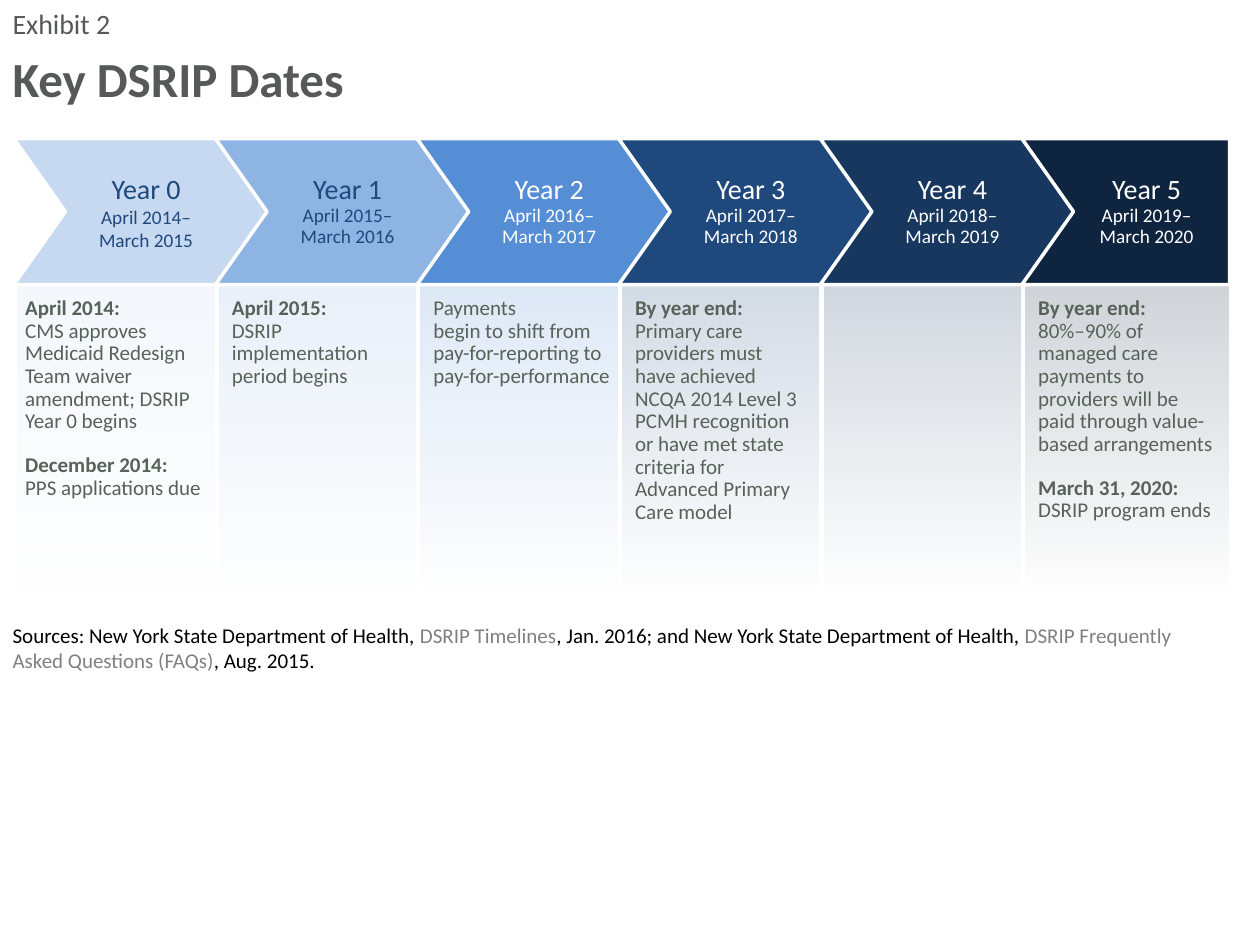
"""Build the Key DSRIP Dates timeline slide."""
from dataclasses import dataclass

import pptx
import pptx.dml.color
import pptx.enum.shapes
import pptx.enum.text
import pptx.oxml
import pptx.oxml.ns
import pptx.util
from lxml import etree
from pptx.util import Inches

ALIGN = pptx.enum.text.PP_ALIGN
ANCHOR = pptx.enum.text.MSO_ANCHOR


@dataclass(frozen=True)
class Theme:
    font: str = "Calibri"
    title_color: str = "575959"
    note_color: str = "576258"
    dark_text: str = "1F497D"
    white: str = "FFFFFF"
    black: str = "000000"
    grey: str = "808080"
    title_size: int = 28
    heading_size: int = 16
    body_size: int = 12
    date_size: int = 11


@dataclass(frozen=True)
class Year:
    label: str
    fill: str
    text_color: str
    notes: str = ""
    note_width: float = 1.4
    note_height: float = 1.8
    note_inset: float = 0.1
    line_spacing: float = 0.9
    is_last: bool = False


THEME = Theme()
PITCH = 1.6
CHEVRON_LEFT, CHEVRON_TOP, CHEVRON_HEIGHT = 0.11, 1.1, 1.16
CHEVRON_BODY, CHEVRON_POINT = 1.65, 0.41
PANEL_LEFT, PANEL_TOP, PANEL_HEIGHT = 0.14, 2.25, 2.5
NOTE_TOP = 2.36

YEARS = [
    Year("Year 0\nApril 2014–\nMarch 2015", "C6D9F1", THEME.dark_text,
         "April 2014:\nCMS approves Medicaid Redesign Team waiver amendment; "
         "DSRIP Year 0 begins\nDecember 2014:\nPPS applications due",
         1.43, 1.8, note_inset=0.06, line_spacing=1.0),
    Year("Year 1\nApril 2015–\nMarch 2016", "8EB4E3", THEME.dark_text,
         "April 2015:\nDSRIP implementation period begins", 1.35, 0.86),
    Year("Year 2\nApril 2016–\nMarch 2017", "558ED5", THEME.white,
         "Payments\nbegin to shift from\npay-for-reporting to pay-for-performance",
         1.47, 0.94),
    Year("Year 3\nApril 2017–\nMarch 2018", "1F497D", THEME.white,
         "By year end:\nPrimary care providers must have achieved NCQA 2014 Level 3 "
         "PCMH recognition or have met state criteria for Advanced Primary Care model",
         1.31, 1.89),
    Year("Year 4\nApril 2018–\nMarch 2019", "17375E", THEME.white),
    Year("Year 5\nApril 2019–\nMarch 2020", "0F243E", THEME.white,
         "By year end:\n80%–90% of managed care payments to providers will be paid "
         "through value-based arrangements\nMarch 31, 2020:\nDSRIP program ends",
         1.4, 1.7, is_last=True),
]

SOURCES = [
    ("Sources: New York State Department of Health, ", THEME.black),
    ("DSRIP Timelines", THEME.grey),
    (", Jan. 2016; and New York State Department of Health, ", THEME.black),
    ("DSRIP Frequently Asked Questions (FAQs)", THEME.grey),
    (", Aug. 2015.", THEME.black),
]


def rgb(color: str) -> pptx.dml.color.RGBColor:
    """Turn a hex string into a colour."""
    return pptx.dml.color.RGBColor.from_string(color)


def format_runs(paragraph, size: float, color: str, bold: bool = False) -> None:
    """Apply one type style to every run of a paragraph."""
    for run in paragraph.runs:
        run.font.name = THEME.font
        run.font.size = pptx.util.Pt(size)
        run.font.bold = bold
        run.font.color.rgb = rgb(color)


def set_margins(text_frame, left: float, top: float, right: float, bottom: float) -> None:
    """Set the four text insets in inches."""
    text_frame.margin_left, text_frame.margin_right = Inches(left), Inches(right)
    text_frame.margin_top, text_frame.margin_bottom = Inches(top), Inches(bottom)


def draw_panel(shapes, index: int, year: Year) -> None:
    """Draw the fading panel below a chevron."""
    panel = shapes.add_shape(
        pptx.enum.shapes.MSO_SHAPE.RECTANGLE, Inches(PANEL_LEFT + index * PITCH),
        Inches(PANEL_TOP), Inches(1.61 if year.is_last else 1.56), Inches(PANEL_HEIGHT))
    panel.shadow.inherit = False
    panel.line.fill.background()
    panel.fill.gradient()
    panel.fill.gradient_angle = 90
    for stop in panel.fill.gradient_stops:
        stop.color.rgb = rgb(year.fill)
    colors = panel._element.spPr.iter(pptx.oxml.ns.qn("a:srgbClr"))
    for color, alpha in zip(list(colors), ("0", "20000")):
        etree.SubElement(color, pptx.oxml.ns.qn("a:alpha"), val=alpha)


def draw_chevron(shapes, index: int, year: Year) -> None:
    """Draw a year's chevron with its label."""
    left = CHEVRON_LEFT + index * PITCH
    right = left + CHEVRON_BODY
    middle, bottom = CHEVRON_TOP + CHEVRON_HEIGHT / 2, CHEVRON_TOP + CHEVRON_HEIGHT
    tip = right if year.is_last else right + CHEVRON_POINT
    points = [(right, CHEVRON_TOP), (tip, middle), (right, bottom), (left, bottom),
              (left + CHEVRON_POINT, middle)]
    builder = shapes.build_freeform(Inches(left), Inches(CHEVRON_TOP))
    builder.add_line_segments([(Inches(x), Inches(y)) for x, y in points], close=True)
    chevron = builder.convert_to_shape()
    chevron.shadow.inherit = False
    chevron.fill.solid()
    chevron.fill.fore_color.rgb = rgb(year.fill)
    chevron.line.color.rgb = rgb(THEME.white)
    chevron.line.width = pptx.util.Pt(2)
    text_frame = chevron.text_frame
    text_frame.word_wrap = True
    text_frame.vertical_anchor = ANCHOR.MIDDLE
    set_margins(text_frame, 0.43, 0.02, 0.1 if year.is_last else 0.39, 0.02)
    text_frame.text = year.label
    for line, paragraph in enumerate(text_frame.paragraphs):
        paragraph.alignment = ALIGN.CENTER
        paragraph.line_spacing = year.line_spacing
        format_runs(paragraph, THEME.date_size if line else THEME.heading_size,
                    year.text_color)


def draw_notes(shapes, index: int, year: Year) -> None:
    """Write a year's milestones with bold date headings."""
    box = shapes.add_textbox(
        Inches(PANEL_LEFT + index * PITCH + year.note_inset), Inches(NOTE_TOP),
        Inches(year.note_width), Inches(year.note_height))
    text_frame = box.text_frame
    text_frame.word_wrap = True
    set_margins(text_frame, 0, 0, 0, 0)
    text_frame.text = year.notes
    for line, paragraph in enumerate(text_frame.paragraphs):
        is_heading = paragraph.text.endswith(":")
        paragraph.line_spacing = 0.9
        if is_heading and line:
            paragraph.space_before = pptx.util.Pt(12)
        format_runs(paragraph, THEME.body_size, THEME.note_color, is_heading)


def place_placeholder(shape, top: float, width: float, height: float, anchor):
    """Position a placeholder and return its plain left-aligned paragraph."""
    shape.left, shape.top = Inches(0), Inches(top)
    shape.width, shape.height = Inches(width), Inches(height)
    text_frame = shape.text_frame
    text_frame.auto_size = pptx.enum.text.MSO_AUTO_SIZE.NONE
    text_frame.word_wrap = True
    text_frame.vertical_anchor = anchor
    paragraph = text_frame.paragraphs[0]
    properties = paragraph._p.get_or_add_pPr()
    properties.set("marL", "0")
    properties.set("indent", "0")
    etree.SubElement(properties, pptx.oxml.ns.qn("a:buNone"))
    paragraph.alignment = ALIGN.LEFT
    paragraph.space_before = pptx.util.Pt(0)
    return paragraph


def main() -> None:
    """Build and save the slide."""
    presentation = pptx.Presentation()
    presentation.slide_width, presentation.slide_height = Inches(10), Inches(7.5)
    slide = presentation.slides.add_slide(
        presentation.slide_layouts.get_by_name("Two Content"))
    title, exhibit, sources = list(slide.placeholders)[:3]

    paragraph = place_placeholder(title, 0.33, 10, 0.57, ANCHOR.MIDDLE)
    paragraph.text = "Key DSRIP Dates"
    format_runs(paragraph, THEME.title_size, THEME.title_color, True)

    paragraph = place_placeholder(exhibit, 0, 10, 0.33, ANCHOR.TOP)
    paragraph.text = "Exhibit 2"
    format_runs(paragraph, THEME.heading_size, THEME.title_color)

    paragraph = place_placeholder(sources, 4.88, 9.83, 0.51, ANCHOR.BOTTOM)
    for text, _ in SOURCES:
        paragraph.add_run().text = text
    format_runs(paragraph, THEME.body_size, THEME.black)
    for run, (_, color) in zip(paragraph.runs, SOURCES):
        run.font.color.rgb = rgb(color)

    timeline = slide.shapes.add_group_shape()
    for draw in (draw_panel, draw_chevron):
        for index, year in enumerate(YEARS):
            draw(timeline.shapes, index, year)
    for index, year in enumerate(YEARS):
        if year.notes:
            draw_notes(slide.shapes, index, year)
    presentation.save("out.pptx")


if __name__ == "__main__":
    main()
